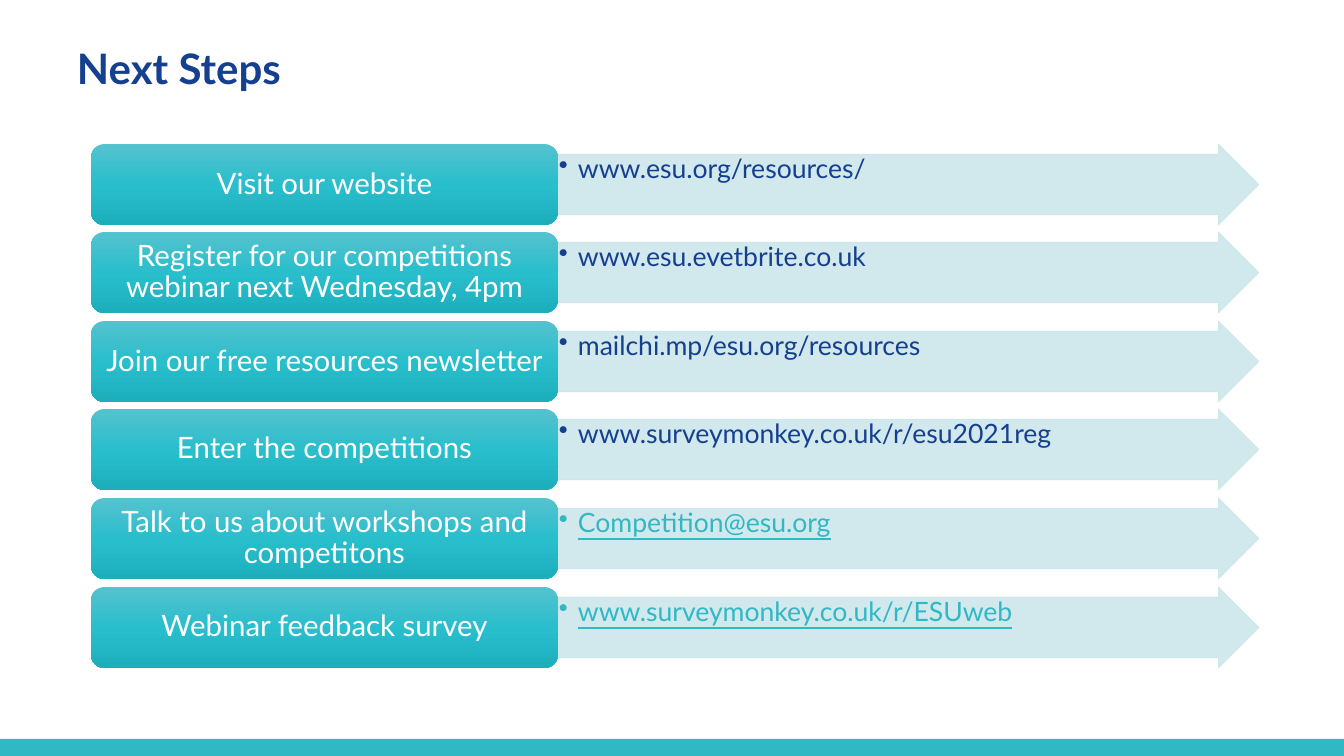
from copy import deepcopy
from lxml.etree import SubElement
from pptx import Presentation
from pptx.dml.color import RGBColor
from pptx.enum.shapes import MSO_SHAPE
from pptx.enum.text import MSO_ANCHOR, PP_ALIGN
from pptx.oxml.ns import qn
from pptx.util import Pt

PX = 914400 / 100.8  # EMU in one px

THEME = {
    "navy": RGBColor.from_string("153F8F"),
    "teal": RGBColor.from_string("30B8C5"),
    "white": RGBColor.from_string("FFFFFF"),
    "pale": RGBColor.from_string("CDE6EA"),
    "gradient": [(0, "55C2CF"), (0.5, "29BECC"), (1, "1DAEBC")],
    "font": "Lato",
    "title": Pt(30),
    "step": Pt(21),
    "link": Pt(19),
}

STEPS = [
    ("Visit our website", "www.esu.org/resources/", False),
    ("Register for our competitions webinar next Wednesday, 4pm", "www.esu.evetbrite.co.uk", False),
    ("Join our free resources newsletter", "mailchi.mp/esu.org/resources", False),
    ("Enter the competitions", "www.surveymonkey.co.uk/r/esu2021reg", False),
    ("Talk to us about workshops and competitons", "Competition@esu.org", True),
    ("Webinar feedback survey", "www.surveymonkey.co.uk/r/ESUweb", True),
]


def add_shape(kind, *box):
    sp = s.shapes.add_shape(kind, *(round(v * PX) for v in box))
    sp.shadow.inherit = False
    sp.line.fill.background()
    return sp


def write(sp, text, insets, anchor, align, color, bullet=False, **font):
    tf = sp.text_frame
    sides = ("margin_left", "margin_top", "margin_right", "margin_bottom")
    frame = dict(zip(sides, (round(v * PX) for v in insets)))
    for name, value in {**frame, "word_wrap": True, "vertical_anchor": anchor}.items():
        setattr(tf, name, value)
    p = tf.paragraphs[0]
    p.alignment, p.line_spacing = align, 0.9
    if bullet:
        pPr = p._p.get_or_add_pPr()
        pPr.set("marL", str(round(19 * PX)))
        pPr.set("indent", str(round(-19 * PX)))
        SubElement(pPr, qn("a:buChar"), char="•")
    r = p.add_run()
    r.text = text
    for name, value in {"name": THEME["font"], **font}.items():
        setattr(r.font, name, value)
    r.font.color.rgb = color


prs = Presentation()
prs.slide_width, prs.slide_height = round(1344 * PX), round(756 * PX)
s = prs.slides.add_slide(prs.slide_layouts[6])

# Footer band
band = add_shape(MSO_SHAPE.RECTANGLE, 0, 739, 1344, 17)
band.fill.solid()
band.fill.fore_color.rgb = THEME["teal"]

# Title
title = s.shapes.add_textbox(*(round(v * PX) for v in (77, 40, 987, 103)))
write(title, "Next Steps", (0, 8, 0, 0), MSO_ANCHOR.TOP, PP_ALIGN.LEFT,
      THEME["navy"], size=THEME["title"], bold=True)

# Step rows, spread evenly over 443 px
for i, (step, link, is_link) in enumerate(STEPS):
    top = 144 + 443 * i // (len(STEPS) - 1)

    # Arrow with the address
    arrow = add_shape(MSO_SHAPE.RIGHT_ARROW, 558, top, 701, 81)
    arrow.adjustments[0], arrow.adjustments[1] = 0.75, 0.5
    for fill in (arrow.fill, arrow.line.fill):
        fill.solid()
        fill.fore_color.rgb = THEME["pale"]
    arrow.line.width = Pt(0.5)
    for clr in arrow._element.spPr.iter(qn("a:srgbClr")):
        SubElement(clr, qn("a:alpha"), val="90000")
    write(arrow, link, (1, 1, 1, 1), MSO_ANCHOR.TOP, PP_ALIGN.LEFT,
          THEME["teal" if is_link else "navy"], bullet=True,
          size=THEME["link"], underline=is_link)

    # Rounded box with the step
    box = add_shape(MSO_SHAPE.ROUNDED_RECTANGLE, 91, top, 467, 81)
    box.fill.gradient()
    box.fill.gradient_angle = 270
    stops = box._element.spPr.find(".//" + qn("a:gsLst"))
    stops.append(deepcopy(stops[0]))
    for stop, (position, color) in zip(box.fill.gradient_stops, THEME["gradient"]):
        stop.position = position
        stop.color.rgb = RGBColor.from_string(color)
    write(box, step, (9, 4, 9, 4), MSO_ANCHOR.MIDDLE, PP_ALIGN.CENTER,
          THEME["white"], size=THEME["step"])

prs.save("out.pptx")
